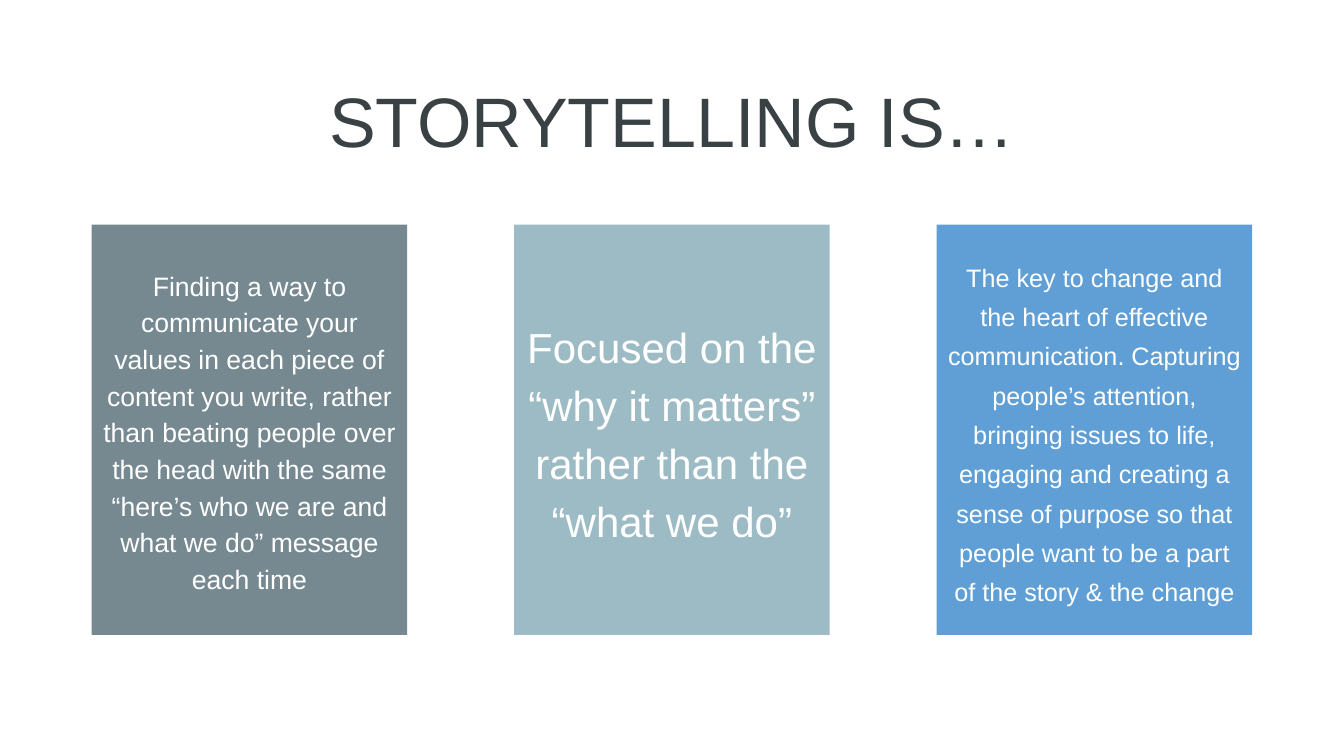
"""Build a slide with a title and three coloured cards about storytelling."""
from pptx import Presentation
from pptx.dml.color import RGBColor as RGB
from pptx.enum.shapes import MSO_SHAPE as Shape
from pptx.enum.text import MSO_ANCHOR as Anchor, PP_ALIGN as Align
from pptx.util import Inches, Pt


def style(para, size, color):
    para.alignment = Align.CENTER
    para.font.name = "Arial"
    para.font.size = Pt(size)
    para.font.color.rgb = RGB.from_string(color)


deck = Presentation()
deck.slide_width = Inches(13.33)
deck.slide_height = Inches(7.5)
slide = deck.slides.add_slide(deck.slide_layouts[6])

title = slide.shapes.add_textbox(Inches(1.4), Inches(0.72), Inches(10.54), Inches(0.94))
title.text_frame.word_wrap = True
title.text_frame.text = "STORYTELLING IS…"
style(title.text_frame.paragraphs[0], 50, "394144")

cards = [
    ("768991", 19, 1.15, 0,
     "Finding a way to communicate your values in each piece of content you write, "
     "rather than beating people over the head with the same “here’s who we are and "
     "what we do” message each time"),
    ("9DBBC5", 30, 1.15, 0,
     "Focused on the “why it matters” rather than the “what we do”"),
    ("5F9FD5", 18, 1.3, 10,
     "The key to change and the heart of effective communication. Capturing people’s "
     "attention, bringing issues to life, engaging and creating a sense of purpose so "
     "that people want to be a part of the story & the change"),
]
for col, (fill, size, lead, before, text) in enumerate(cards):
    card = slide.shapes.add_shape(
        Shape.RECTANGLE, Inches(0.91 + 4.19 * col), Inches(2.23), Inches(3.13), Inches(4.07))
    card.shadow.inherit = False
    card.fill.solid()
    card.fill.fore_color.rgb = RGB.from_string(fill)
    card.line.fill.background()
    frame = card.text_frame
    frame.word_wrap = True
    frame.vertical_anchor = Anchor.MIDDLE
    frame.text = text
    para = frame.paragraphs[0]
    para.line_spacing = lead
    para.space_before = Pt(before)
    style(para, size, "FFFFFF")

deck.save("out.pptx")
